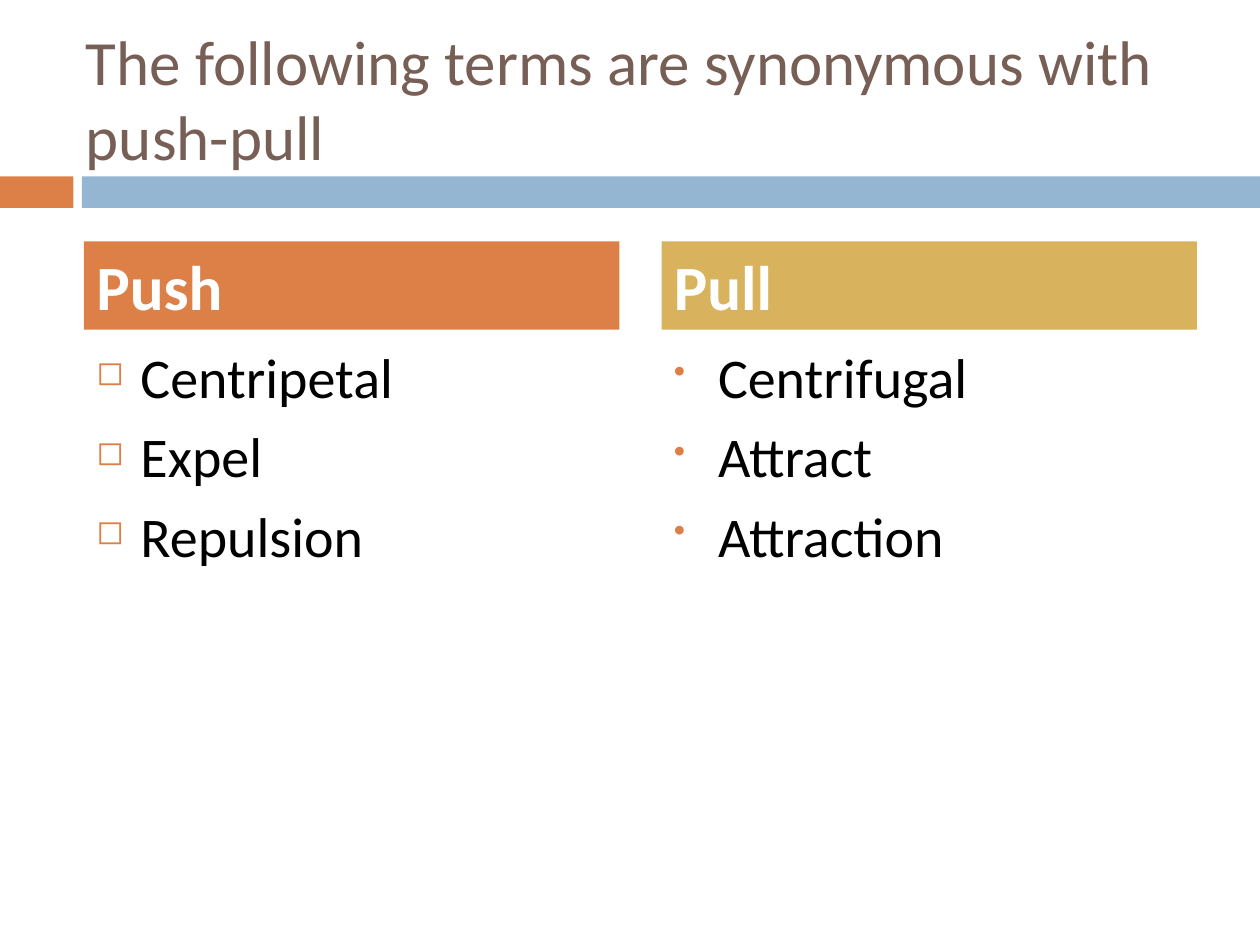
"""Build a slide that lists synonyms of push and pull in two columns."""
from dataclasses import dataclass
from typing import Optional

from lxml.etree import SubElement
from pptx import Presentation
from pptx.dml.color import RGBColor
from pptx.enum.shapes import MSO_SHAPE as Shape
from pptx.enum.text import MSO_ANCHOR as Anchor, PP_ALIGN as Align
from pptx.oxml.ns import qn
from pptx.util import Pt

FONT = "Calibri"
ORANGE, BLUE, GOLD = "DD8047", "94B6D2", "D8B25C"
BROWN, WHITE, BLACK = "775F55", "FFFFFF", "000000"
COLUMN_WIDTH = 306
HEADING_TOP, HEADING_HEIGHT = 138, 50.4
LIST_TOP, LIST_HEIGHT = 192, 282
BULLET_INDENT = 25.2


@dataclass
class Box:
    left: float
    top: float
    width: float
    height: float

    def lengths(self) -> list:
        return [Pt(value) for value in (self.left, self.top, self.width, self.height)]


@dataclass
class Column:
    left: float
    heading: str
    fill: str
    bullet: str
    terms: list[str]


COLUMNS = [
    Column(48, "Push", ORANGE, "◻", ["Centripetal", "Expel", "Repulsion"]),
    Column(378, "Pull", GOLD, "•", ["Centrifugal", "Attract", "Attraction"]),
]


def color(value: str) -> RGBColor:
    return RGBColor.from_string(value)


def add_bar(slide, box: Box, fill: str):
    shape = slide.shapes.add_shape(Shape.RECTANGLE, *box.lengths())
    shape.shadow.inherit = False
    shape.fill.solid()
    shape.fill.fore_color.rgb = color(fill)
    shape.line.fill.background()
    return shape


def add_bullet(paragraph, character: str) -> None:
    properties = paragraph._p.get_or_add_pPr()
    properties.set("marL", str(Pt(BULLET_INDENT)))
    properties.set("indent", str(-Pt(BULLET_INDENT)))
    bullet_color = SubElement(properties, qn("a:buClr"))
    SubElement(bullet_color, qn("a:srgbClr"), val=ORANGE)
    SubElement(properties, qn("a:buSzPct"), val="60000")
    SubElement(properties, qn("a:buChar"), char=character)


def write(shape, lines: list[str], *, size: float, fill: str, bold: bool = False,
          anchor=Anchor.MIDDLE, space_before: float = 0,
          bullet: Optional[str] = None) -> None:
    frame = shape.text_frame
    frame.word_wrap = True
    frame.vertical_anchor = anchor
    for index, line in enumerate(lines):
        paragraph = frame.add_paragraph() if index else frame.paragraphs[0]
        paragraph.alignment = Align.LEFT
        paragraph.space_before = Pt(space_before)
        if bullet:
            add_bullet(paragraph, bullet)
        run = paragraph.add_run()
        run.text = line
        run.font.name = FONT
        run.font.size = Pt(size)
        run.font.bold = bold
        run.font.color.rgb = color(fill)


def add_column(slide, column: Column) -> None:
    heading_box = Box(column.left, HEADING_TOP, COLUMN_WIDTH, HEADING_HEIGHT)
    heading = add_bar(slide, heading_box, column.fill)
    write(heading, [column.heading], size=36, fill=WHITE, bold=True, space_before=7)
    list_box = Box(column.left, LIST_TOP, COLUMN_WIDTH, LIST_HEIGHT)
    terms = slide.shapes.add_textbox(*list_box.lengths())
    write(terms, column.terms, size=32, fill=BLACK, anchor=Anchor.TOP,
          space_before=7, bullet=column.bullet)


def main() -> None:
    presentation = Presentation()
    presentation.slide_width, presentation.slide_height = Pt(720), Pt(540)
    slide = presentation.slides.add_slide(presentation.slide_layouts[6])
    add_bar(slide, Box(0, 100.8, 42, 18), ORANGE)
    add_bar(slide, Box(46.8, 100.8, 673.2, 18), BLUE)
    title = slide.shapes.add_textbox(*Box(42, 21.6, 642, 68.4).lengths())
    write(title, ["The following terms are synonymous with push-pull"],
          size=36, fill=BROWN)
    for column in COLUMNS:
        add_column(slide, column)
    presentation.save("out.pptx")


if __name__ == "__main__":
    main()
